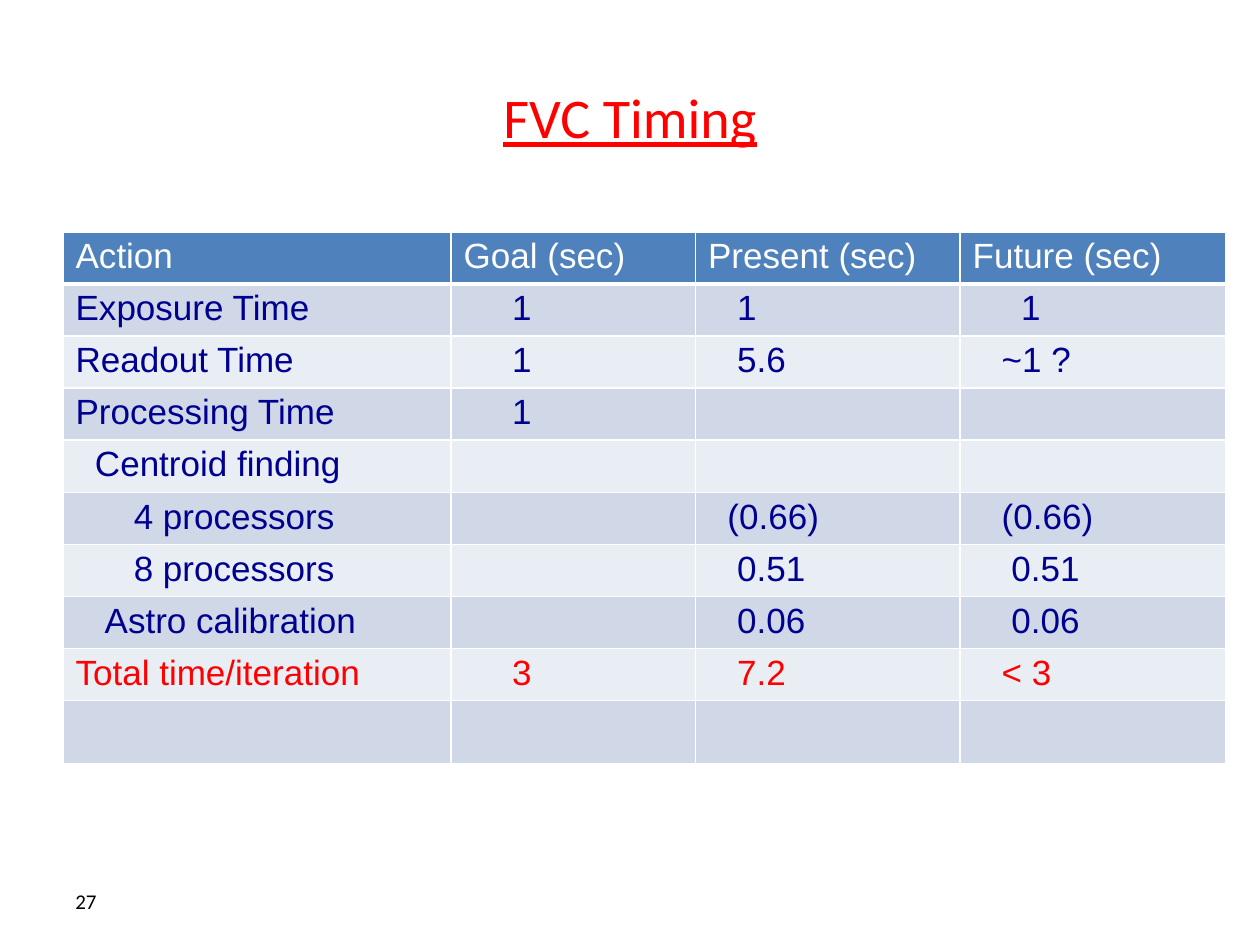
"""Build the FVC timing slide: a title, a table of step times and a page number."""
from pptx import Presentation
from pptx.dml.color import RGBColor
from pptx.enum.text import MSO_ANCHOR, PP_ALIGN
from pptx.oxml import parse_xml
from pptx.oxml.ns import nsdecls
from pptx.util import Inches, Pt

TITLE = "FVC Timing"
PAGE_NUMBER = "27"
HEADINGS = ["Action", "Goal (sec)", "Present (sec)", "Future (sec)"]
TIMINGS = [
    [("Exposure Time", 0), ("1", 5), ("1", 3), ("1", 5)],
    [("Readout Time", 0), ("1", 5), ("5.6", 3), ("~1 ?", 3)],
    [("Processing Time", 0), ("1", 5), None, None],
    [("Centroid finding", 2), None, None, None],
    [("4 processors", 6), None, ("(0.66)", 2), ("(0.66)", 3)],
    [("8 processors", 6), None, ("0.51", 3), ("0.51", 4)],
    [("Astro calibration", 3), None, ("0.06", 3), ("0.06", 4)],
    [("Total time/iteration", 0), ("3", 5), ("7.2", 3), ("< 3", 3)],
    [None] * 4,
]
TOTAL_ROW = 8
COLUMN_WIDTHS = [3.08, 1.94, 2.1, 2.11]
ROW_HEIGHT, LAST_ROW_HEIGHT = 0.41, 0.5
CELL_MARGIN, INDENT_STEP = 0.1, 0.077

THEME = {
    "red": "FF0000", "navy": "000090", "black": "000000", "white": "FFFFFF",
    "header": "4F81BD", "bands": ["E9EDF4", "D0D8E8"],
    "title_font": "Calibri", "table_font": "Arial",
    "title_size": 32, "table_size": 20, "page_size": 12,
}


def style(paragraph, font_name, size, color):
    font = paragraph.font
    font.name, font.size, font.bold = font_name, Pt(size), False
    font.color.rgb = RGBColor.from_string(color)


def add_borders(cell, bottom_width):
    properties = cell._tc.get_or_add_tcPr()
    for side, width in (("L", 1), ("R", 1), ("T", 1), ("B", bottom_width)):
        properties.append(parse_xml(
            f'<a:ln{side} {nsdecls("a")} w="{Pt(width)}"><a:solidFill>'
            f'<a:srgbClr val="{THEME["white"]}"/></a:solidFill></a:ln{side}>'))


def fill_cell(cell, entry, fill, color, bottom_width):
    text, indent = entry or ("", 0)
    add_borders(cell, bottom_width)
    cell.fill.solid()
    cell.fill.fore_color.rgb = RGBColor.from_string(fill)
    cell.margin_left = Inches(CELL_MARGIN + indent * INDENT_STEP)
    cell.margin_top = cell.margin_bottom = Inches(0.04)
    cell.text = text
    style(cell.text_frame.paragraphs[0], THEME["table_font"], THEME["table_size"], color)


def add_title(slide):
    title = slide.shapes.title
    title.left, title.top, title.width, title.height = map(Inches, (0.5, 0.3, 9, 1.25))
    title.text = TITLE
    title.text_frame.vertical_anchor = MSO_ANCHOR.MIDDLE
    heading = title.text_frame.paragraphs[0]
    heading.alignment = PP_ALIGN.CENTER
    style(heading, THEME["title_font"], THEME["title_size"], THEME["red"])
    heading.font.underline = True


def add_timing_table(slide):
    rows = [[(heading, 0) for heading in HEADINGS]] + TIMINGS
    heights = [ROW_HEIGHT] * len(TIMINGS) + [LAST_ROW_HEIGHT]
    table = slide.shapes.add_table(
        len(rows), len(HEADINGS), Inches(0.5), Inches(1.84),
        Inches(sum(COLUMN_WIDTHS)), Inches(sum(heights))).table
    for column, width in zip(table.columns, COLUMN_WIDTHS):
        column.width = Inches(width)
    for index, (entries, height) in enumerate(zip(rows, heights)):
        table.rows[index].height = Inches(height)
        fill = THEME["bands"][index % 2] if index else THEME["header"]
        color = THEME[{0: "white", TOTAL_ROW: "red"}.get(index, "navy")]
        for cell, entry in zip(table.rows[index].cells, entries):
            fill_cell(cell, entry, fill, color, 1 if index else 3)


def add_page_number(slide):
    frame = slide.shapes.add_textbox(*map(Inches, (0.5, 6.95, 2.33, 0.4))).text_frame
    frame.word_wrap = True
    frame.vertical_anchor = MSO_ANCHOR.MIDDLE
    frame.text = PAGE_NUMBER
    style(frame.paragraphs[0], THEME["title_font"], THEME["page_size"], THEME["black"])


def main():
    deck = Presentation()
    deck.slide_width, deck.slide_height = Inches(10), Inches(7.5)
    slide = deck.slides.add_slide(deck.slide_layouts[5])
    add_title(slide)
    add_page_number(slide)
    add_timing_table(slide)
    deck.save("out.pptx")


if __name__ == "__main__":
    main()
